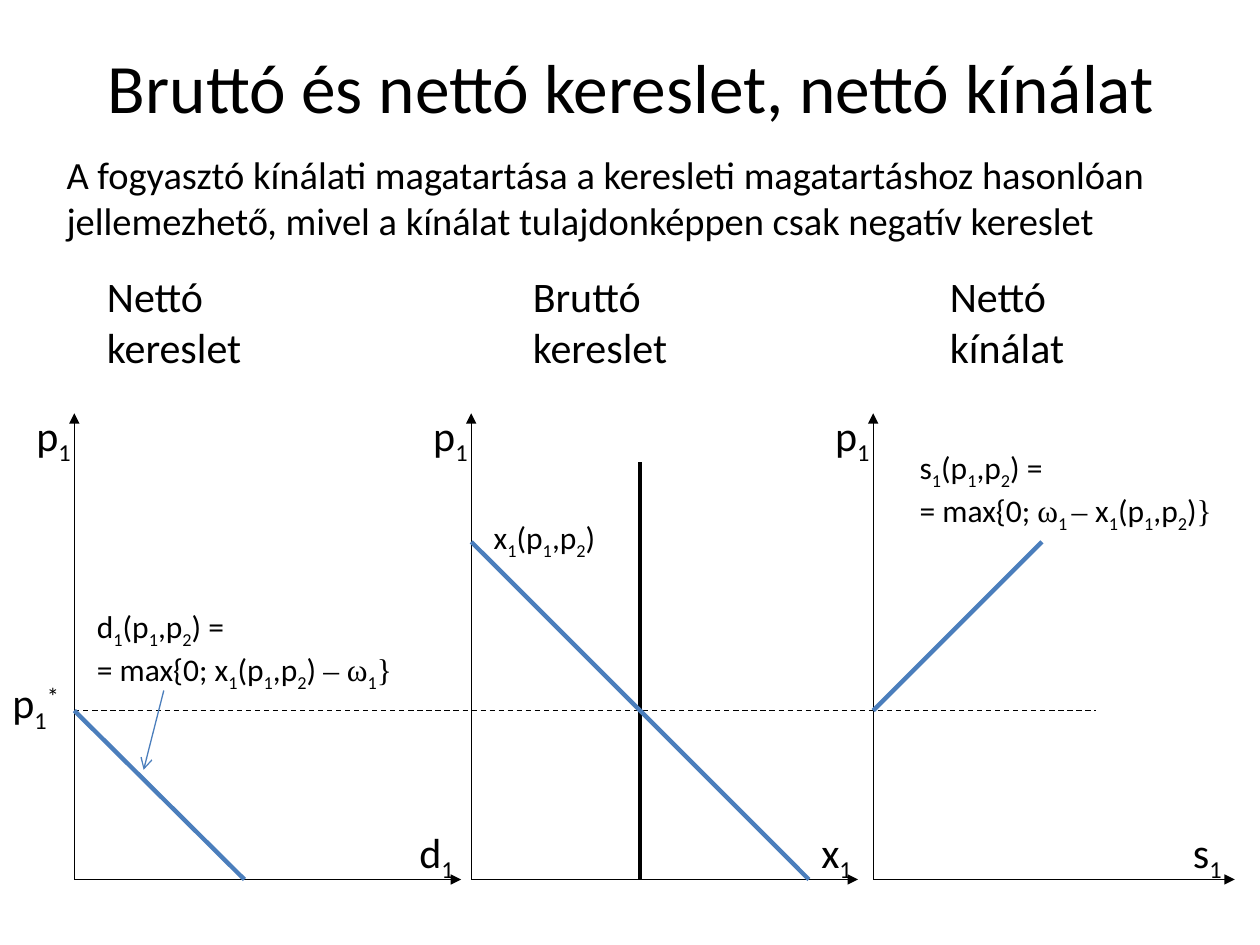
"""Build a slide on gross demand, net demand and net supply."""
from lxml import etree
from pptx import Presentation
from pptx.dml.color import RGBColor
from pptx.enum.dml import MSO_LINE
from pptx.enum.shapes import MSO_CONNECTOR
from pptx.enum.text import MSO_ANCHOR, PP_ALIGN
from pptx.oxml.ns import qn
from pptx.util import Inches, Pt

STRAIGHT = MSO_CONNECTOR.STRAIGHT
DASH = MSO_LINE.DASH
MIDDLE = MSO_ANCHOR.MIDDLE
CENTER = PP_ALIGN.CENTER
COLORS = {"black": "000000", "blue": "4B7EBC"}
FONT, SYMBOL_FONT = "Calibri", "Times New Roman"
BASELINES = {"_": "-25000", "^": "30000"}
BOTTOM, TOP, PRICE, CHOKE = 6.98, 3.28, 5.64, 4.3
ENDOWMENT = 5.08


def add_text(tf, text, size=24, wrap=True, align=None):
    """Fill a frame; | splits runs, and _ ^ ~ start a subscript, superscript or symbol."""
    tf.word_wrap = wrap
    for i, line in enumerate(text.split("\n")):
        p = tf.paragraphs[0] if i == 0 else tf.add_paragraph()
        p.alignment = align
        for part in line.split("|"):
            r = p.add_run()
            r.text = part.lstrip("_^~")
            r.font.size = Pt(size)
            r.font.name = SYMBOL_FONT if part[0] == "~" else FONT
            r.font.color.rgb = RGBColor.from_string(COLORS["black"])
            if part[0] in BASELINES:
                r.font._element.set("baseline", BASELINES[part[0]])


def add_line(x1, y1, x2, y2, color="black", width=0.75, dash=None, head=None):
    """Draw a straight line with an optional dash and arrowhead."""
    c = s.shapes.add_connector(STRAIGHT, Inches(x1), Inches(y1), Inches(x2), Inches(y2))
    c.line.color.rgb = RGBColor.from_string(COLORS[color])
    c.line.width = Pt(width)
    if dash:
        c.line.dash_style = dash
    if head:
        etree.SubElement(c.line._get_or_add_ln(), qn("a:tailEnd"), type=head)
    etree.SubElement(c._element.spPr, qn("a:effectLst"))


prs = Presentation()
prs.slide_width, prs.slide_height = Inches(10), Inches(7.5)
s = prs.slides.add_slide(prs.slide_layouts[5])

title = s.shapes.title
title.left, title.top, title.width, title.height = Inches(0.51), Inches(0.13), Inches(9), Inches(1.1)
title.text_frame.vertical_anchor = MIDDLE
add_text(title.text_frame, "Bruttó és nettó kereslet, nettó kínálat", size=39.6, align=CENTER)

panels = [
    (0.59, 3.66, "d", 3.23, "Nettó kereslet", 0.75),
    (3.74, 6.81, "x", 6.42, "Bruttó kereslet", 4.13),
    (6.93, 9.8, "s", 9.37, "Nettó kínálat", 7.44),
]
labels = []
for x, x_end, name, name_x, heading, heading_x in panels:
    add_line(x, BOTTOM, x_end, BOTTOM, head="triangle")
    add_line(x, BOTTOM, x, TOP, head="triangle")
    labels += [
        (name_x, 6.51, 0.63, 0.5, f"{name}|_1", 24, True),
        (x - 0.4, 3.2, 1.17, 0.5, "p|_1", 24, True),
        (heading_x, 2.1, 1.65, 0.91, heading, 24, True),
    ]

add_line(ENDOWMENT, 3.67, ENDOWMENT, BOTTOM, width=2.5)
add_line(0.59, PRICE, 8.7, PRICE, dash=DASH)

curves = [
    (0.59, PRICE, 1.94, BOTTOM),
    (3.74, CHOKE, ENDOWMENT, PRICE),
    (ENDOWMENT, PRICE, 6.42, BOTTOM),
    (8.27, CHOKE, 6.93, PRICE),
]
for curve in curves:
    add_line(*curve, color="blue", width=2.5)
add_line(1.3, 5.48, 1.14, 6.11, color="blue", head="arrow")

args = "(p|_1|,p|_2|)"
intro = ("A fogyasztó kínálati magatartása a keresleti magatartáshoz hasonlóan "
         "jellemezhető, mivel a kínálat tulajdonképpen csak negatív kereslet")
labels += [
    (0, 5.32, 1.17, 0.5, "p|_1|^*", 24, True),
    (0.67, 4.77, 2.68, 0.71, f"d|_1|{args} =\n= max{{0; x|_1|{args} |~– ω|_1|~}}", 18, True),
    (7.2, 3.51, 2.68, 0.71, f"s|_1|{args} =\n= max{{0; |~ω|_1 |~– |x|_1|{args}|~}}", 18, True),
    (3.82, 4.06, 1.05, 0.4, f"x|_1|{args}", 18, False),
    (0.43, 1.15, 8.82, 0.84, intro, 22, True),
]
for x, y, w, h, text, size, wrap in labels:
    box = s.shapes.add_textbox(Inches(x), Inches(y), Inches(w), Inches(h))
    add_text(box.text_frame, text, size=size, wrap=wrap)

prs.save("out.pptx")
